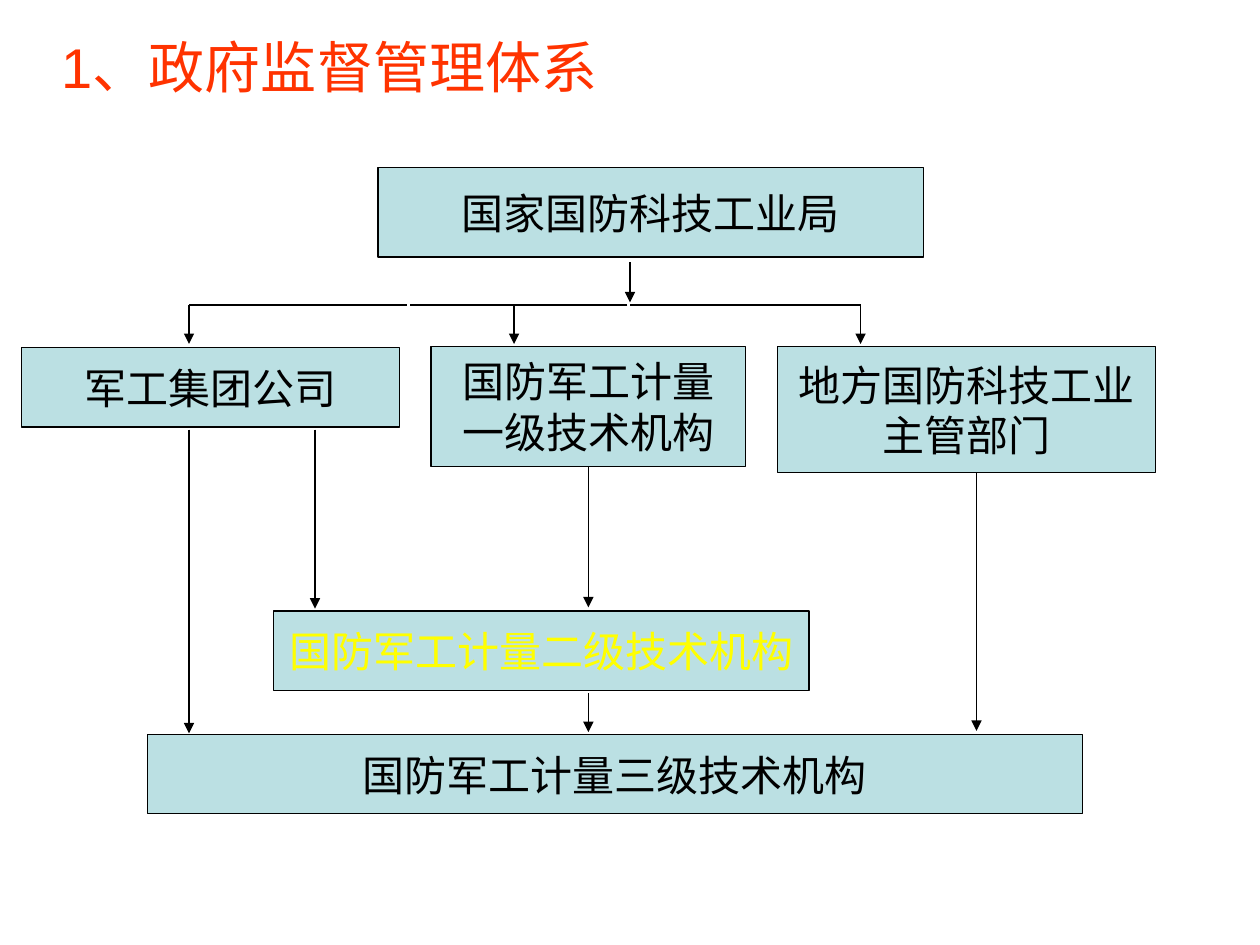
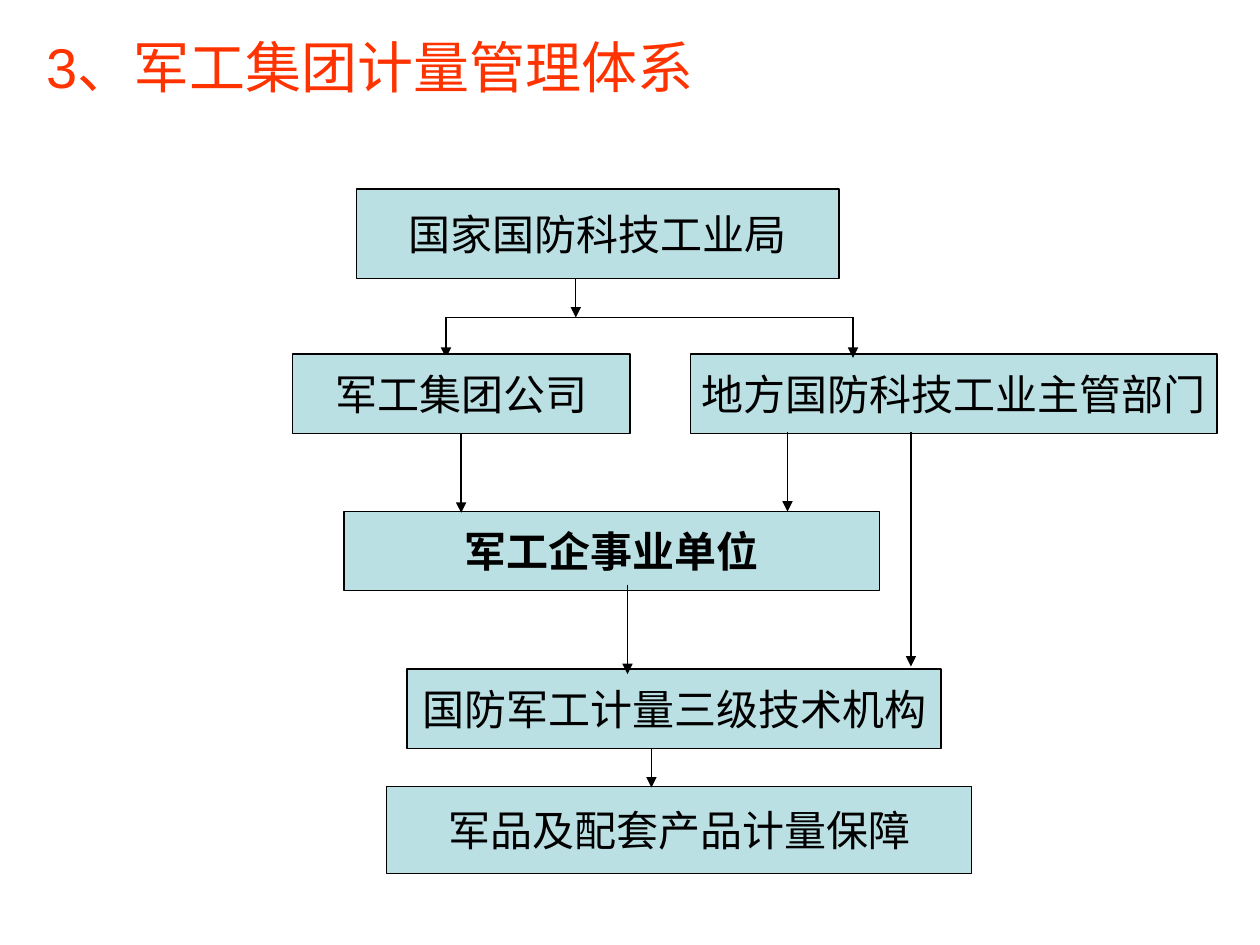
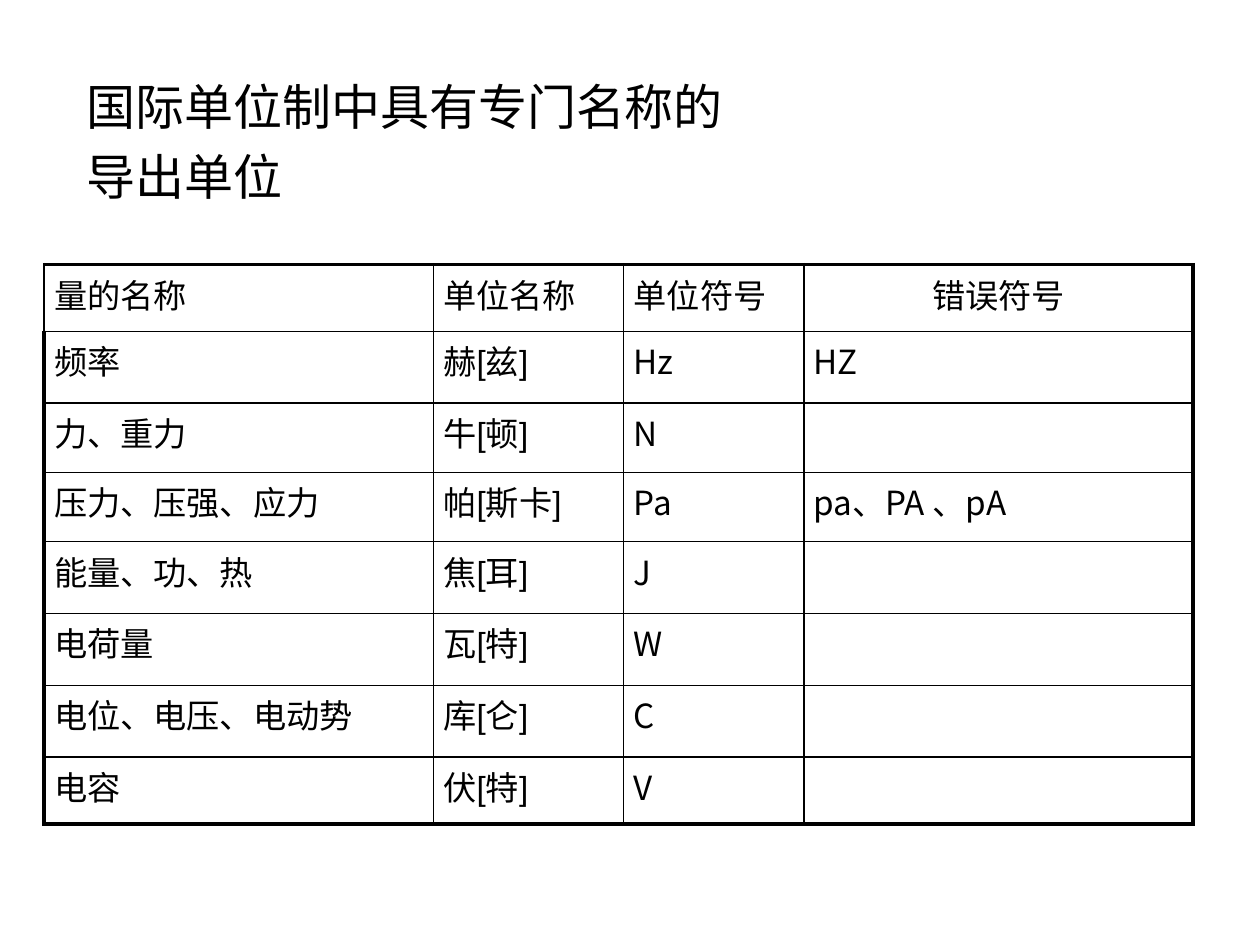
from lxml import etree
from pptx import Presentation
from pptx.dml.color import RGBColor
from pptx.enum import shapes, text
from pptx.oxml.ns import qn
from pptx.util import Inches, Pt

BLACK = RGBColor(0x00, 0x00, 0x00)
RED = RGBColor(0xFF, 0x33, 0x00)
YELLOW = RGBColor(0xFF, 0xFF, 0x00)
PALE_TEAL = RGBColor(0xBB, 0xE0, 0xE3)
SANS, SERIF, CJK = "Arial", "Times New Roman", "Noto Sans CJK SC"
CENTER = text.PP_ALIGN.CENTER
TOP, LEFT, BOTTOM, RIGHT = range(4)
THIN, THICK = 1, 2.25

GOVERNMENT = [
    ("box", "国家国防科技工业局", (3, 1.33, 4.33, 0.71), {}),
    ("box", "地方国防科技工业\n主管部门", (6.17, 2.75, 3, 1), {}),
    ("box", "国防军工计量\n一级技术机构", (3.42, 2.75, 2.5, 0.95), {}),
    ("box", "国防军工计量二级技术机构", (2.17, 4.85, 4.25, 0.63), {"face": SANS, "color": YELLOW}),
    ("box", "国防军工计量三级技术机构", (1.17, 5.83, 7.42, 0.63), {}),
    ("box", "军工集团公司", (0.17, 2.76, 3, 0.63), {}),
    ("arrow", (5, 2.08), (5, 2.4)),
    ("line", (3.23, 2.42), (1.5, 2.42)),
    ("line", (4.98, 2.42), (3.25, 2.42)),
    ("line", (6.83, 2.42), (5, 2.42)),
    ("arrow", (1.5, 2.42), (1.5, 2.73)),
    ("arrow", (4.08, 2.42), (4.08, 2.73)),
    ("arrow", (6.83, 2.42), (6.83, 2.73)),
    ("arrow", (1.5, 3.41), (1.5, 5.82)),
    ("arrow", (2.5, 3.41), (2.5, 4.83)),
    ("arrow", ("国防军工计量\n一级技术机构", BOTTOM), (4.67, 4.82)),
    ("arrow", (7.75, 3.75), (7.75, 5.8)),
    ("arrow", (4.67, 5.5), (4.67, 5.81)),
]

GROUP = [
    ("box", "国家国防科技工业局", (2.83, 1.5, 3.83, 0.71), {}),
    ("box", "地方国防科技工业主管部门", (5.48, 2.81, 4.18, 0.63), {}),
    ("box", "军工企事业单位", (2.73, 4.06, 4.25, 0.63), {"bold": True}),
    ("box", "国防军工计量三级技术机构", (3.23, 5.31, 4.24, 0.63), {}),
    ("line", (3.54, 2.52), (6.77, 2.52)),
    ("arrow", (3.54, 2.52), (3.54, 2.84)),
    ("arrow", (6.77, 2.52), (6.77, 2.84)),
    ("arrow", (4.57, 2.21), (4.57, 2.52)),
    ("arrow", (7.23, 3.43), (7.23, 5.29)),
    ("box", "军工集团公司", (2.32, 2.81, 2.68, 0.63), {}),
    ("arrow", ("军工集团公司", BOTTOM), (3.66, 4.07)),
    ("arrow", (4.98, 4.64), (4.98, 5.35)),
    ("box", "军品及配套产品计量保障", (3.07, 6.24, 4.64, 0.69), {"face": SANS}),
    ("arrow", (5.17, 5.94), (5.17, 6.25)),
    ("arrow", (6.25, 3.43), (6.25, 4.06)),
]

UNITS = [
    ("量的名称", "单位名称", "单位符号", "错误符号"),
    ("频率", "赫[兹]", "Hz", "HZ"),
    ("力、重力", "牛[顿]", "N", ""),
    ("压力、压强、应力", "帕[斯卡]", "Pa", "pa、PA 、pA"),
    ("能量、功、热", "焦[耳]", "J", ""),
    ("电荷量", "瓦[特]", "W", ""),
    ("电位、电压、电动势", "库[仑]", "C", ""),
    ("电容", "伏[特]", "V", ""),
]
COLUMN_WIDTHS = (3.09, 1.51, 1.43, 3.09)
ROW_HEIGHTS = (0.53, 0.57, 0.55, 0.55, 0.57, 0.57, 0.57, 0.53)


def style(paragraph, size, face, color, bold=False):
    for run in paragraph.runs:
        font = run.font
        font.size, font.name, font.bold = Pt(size), face, bold
        font.color.rgb = color
        east_asian = etree.SubElement(font._element, qn("a:ea"))
        east_asian.set("typeface", CJK)


def add_title(slide, words, at=(0.27, 0.06, 9.45, 0.93), size=32, color=RED, indent=0.1, spacing=1.0):
    frame = slide.shapes.add_textbox(*map(Inches, at)).text_frame
    frame.word_wrap = True
    frame.vertical_anchor = text.MSO_ANCHOR.MIDDLE
    frame.margin_left = Inches(indent)
    heading = frame.paragraphs[0]
    heading.text = words
    heading.line_spacing = spacing
    style(heading, size, SANS, color)


def add_box(slide, words, at, face=SERIF, color=BLACK, bold=False):
    box = slide.shapes.add_shape(shapes.MSO_SHAPE.RECTANGLE, *map(Inches, at))
    box.shadow.inherit = False
    box.fill.solid()
    box.fill.fore_color.rgb = PALE_TEAL
    box.line.color.rgb = BLACK
    box.line.width = Pt(0.75)
    frame = box.text_frame
    frame.word_wrap = False
    frame.vertical_anchor = text.MSO_ANCHOR.MIDDLE
    frame.text = words
    for paragraph in frame.paragraphs:
        paragraph.alignment = CENTER
        style(paragraph, 24, face, color, bold)
    return box


def add_link(slide, boxes, start, end, arrow):
    joined = isinstance(start[0], str)
    origin = (end[0], end[1]) if joined else start
    link = slide.shapes.add_connector(shapes.MSO_CONNECTOR.STRAIGHT, *map(Inches, origin + end))
    if joined:
        link.begin_connect(boxes[start[0]], start[1])
    link.line.color.rgb = BLACK
    link.line.width = Pt(0.75)
    if arrow:
        etree.SubElement(link.line._get_or_add_ln(), qn("a:tailEnd")).set("type", "triangle")
    etree.SubElement(link._element.spPr, qn("a:effectLst"))


def add_diagram(slide, parts):
    boxes = {}
    for kind, *details in parts:
        if kind == "box":
            words, at, look = details
            boxes[words] = add_box(slide, words, at, **look)
        else:
            add_link(slide, boxes, *details, arrow=kind == "arrow")


def set_borders(cell, widths):
    properties = cell._tc.get_or_add_tcPr()
    for position, (side, width) in enumerate(zip("LRTB", widths)):
        border = etree.Element(qn(f"a:ln{side}"), w=str(Pt(width)))
        fill = etree.SubElement(border, qn("a:solidFill"))
        etree.SubElement(fill, qn("a:srgbClr")).set("val", str(BLACK))
        properties.insert(position, border)


def add_units(slide):
    last_row, last_column = len(UNITS) - 1, len(COLUMN_WIDTHS) - 1
    size = (sum(COLUMN_WIDTHS), sum(ROW_HEIGHTS))
    grid = slide.shapes.add_table(last_row + 1, last_column + 1, *map(Inches, (0.35, 2.1) + size)).table
    grid.first_row = grid.horz_banding = False
    for column, width in zip(grid.columns, COLUMN_WIDTHS):
        column.width = Inches(width)
    for row, height in zip(grid.rows, ROW_HEIGHTS):
        row.height = Inches(height)
    for r, entries in enumerate(UNITS):
        for c, entry in enumerate(entries):
            cell = grid.cell(r, c)
            cell.margin_left = cell.margin_right = Inches(0.08)
            cell.margin_top = cell.margin_bottom = Inches(0.04)
            cell.fill.background()
            paragraph = cell.text_frame.paragraphs[0]
            paragraph.text = entry
            if r == 0 and c == last_column:
                paragraph.alignment = CENTER
            style(paragraph, 19, CJK if r and c > 1 else SANS, BLACK)
            outer = (c == 0 and r > 0, c == last_column, r == 0, r == last_row)
            set_borders(cell, [THICK if edge else THIN for edge in outer])


def main():
    deck = Presentation()
    deck.slide_width, deck.slide_height = Inches(10), Inches(7.5)
    government, group, units = [deck.slides.add_slide(deck.slide_layouts[6]) for _ in range(3)]
    add_title(government, "1、政府监督管理体系", indent=0.22)
    add_diagram(government, GOVERNMENT)
    add_title(group, "3、军工集团计量管理体系")
    add_diagram(group, GROUP)
    add_title(units, "国际单位制中具有专门名称的\v导出单位", (0.59, 0.36, 8.51, 1.42), 28, BLACK, spacing=1.2)
    add_units(units)
    deck.save("out.pptx")


if __name__ == "__main__":
    main()
